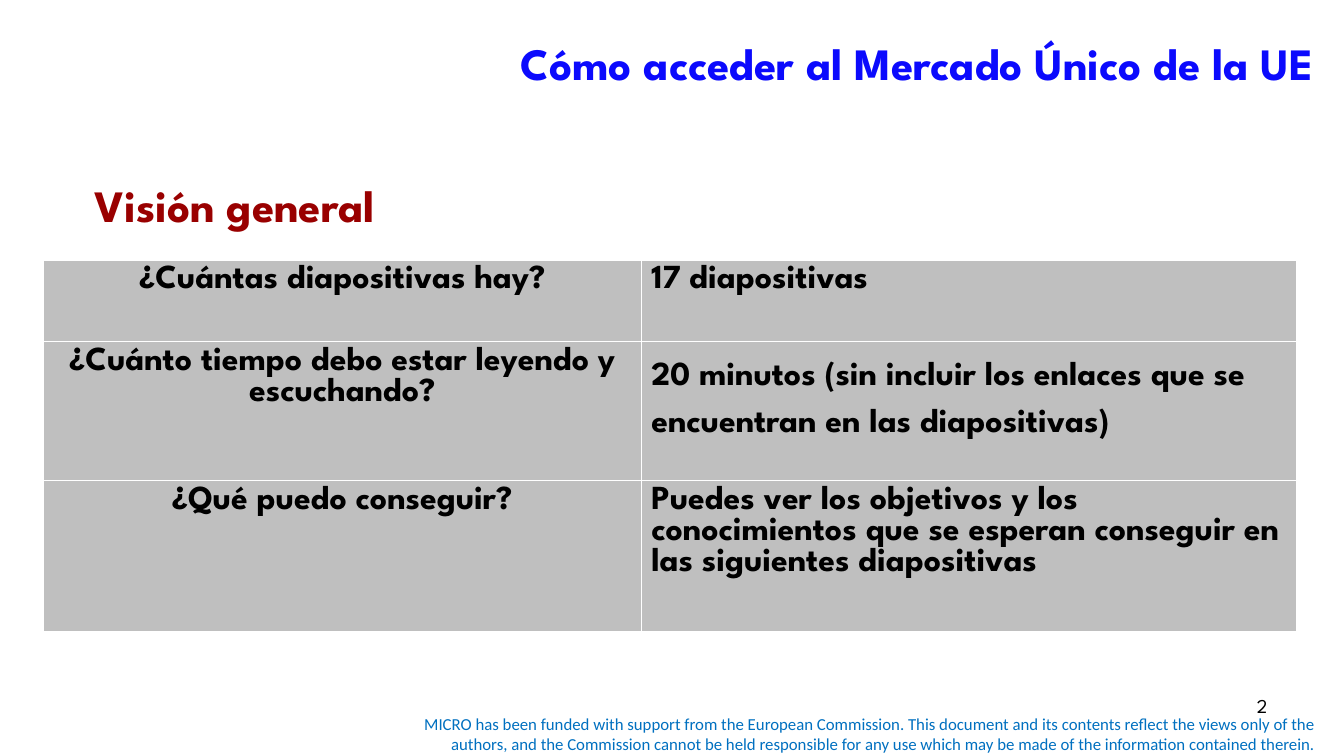
from dataclasses import dataclass

from lxml import etree
from pptx import Presentation
from pptx.dml.color import RGBColor
from pptx.enum import text
from pptx.oxml import ns
from pptx.util import Inches, Pt

SPARTAN = "League Spartan"
LEFT, CENTER, RIGHT = text.PP_ALIGN.LEFT, text.PP_ALIGN.CENTER, text.PP_ALIGN.RIGHT
TOP, MIDDLE = text.MSO_ANCHOR.TOP, text.MSO_ANCHOR.MIDDLE


@dataclass
class Style:
    size: int
    color: str
    bold: bool = False
    align: text.PP_ALIGN = LEFT
    font: str = SPARTAN
    spacing: float = 1.0


@dataclass
class Label:
    words: str
    box: tuple[float, float, float, float]
    style: Style
    anchor: text.MSO_ANCHOR = TOP


@dataclass
class Row:
    question: str
    answer: str
    height: float
    spacing: float = 1.0


FUNDING = Label(
    "MICRO has been funded with support from the European Commission. "
    "This document and its contents reflect the views only of the authors, "
    "and the Commission cannot be held responsible for any use which may be "
    "made of the information contained therein.",
    (3.75, 7.03, 9.4, 0.5), Style(12, "0070C0", align=RIGHT, font="Calibri"), MIDDLE)
PAGE_NUMBER = Label("2", (9.56, 6.83, 3.11, 0.52), Style(14, "000000", align=RIGHT))
HEADING = Label("Visión general", (0.84, 1.71, 4.6, 0.64), Style(32, "990000", True))
TITLE = Label("Cómo acceder al Mercado Único de la UE", (1.14, 0, 12, 1.25),
              Style(32, "0B0AFD", True, RIGHT), MIDDLE)

COLUMNS = (5.93, 6.5)
ROWS = [
    Row("¿Cuántas diapositivas hay?", "17 diapositivas", 0.81),
    Row("¿Cuánto tiempo debo estar leyendo y escuchando?",
        "20 minutos (sin incluir los enlaces que se encuentran en las diapositivas)",
        1.38, 1.5),
    Row("¿Qué puedo conseguir?",
        "Puedes ver los objetivos y los conocimientos que se esperan conseguir "
        "en las siguientes diapositivas", 1.5),
]


def rgb(value: str) -> RGBColor:
    return RGBColor.from_string(value)


def write(tf, words: str, style: Style) -> None:
    tf.text = words
    p = tf.paragraphs[0]
    p.alignment, p.line_spacing = style.align, style.spacing
    font = p.runs[0].font
    font.name, font.size, font.bold = style.font, Pt(style.size), style.bold
    font.color.rgb = rgb(style.color)


def fill_label(sp, label: Label) -> None:
    sp.left, sp.top, sp.width, sp.height = map(Inches, label.box)
    tf = sp.text_frame
    tf.word_wrap = True
    tf.auto_size = text.MSO_AUTO_SIZE.NONE
    tf.vertical_anchor = label.anchor
    write(tf, label.words, label.style)


def add_label(s, label: Label) -> None:
    fill_label(s.shapes.add_textbox(*map(Inches, label.box)), label)


def paint_cell(cell, fill: str, border: str) -> None:
    tcPr = cell._tc.get_or_add_tcPr()
    for side in ("lnL", "lnR", "lnT", "lnB"):
        line = etree.SubElement(tcPr, ns.qn(f"a:{side}"), w=str(Pt(1)))
        solid = etree.SubElement(line, ns.qn("a:solidFill"))
        etree.SubElement(solid, ns.qn("a:srgbClr"), val=border)
    cell.fill.solid()
    cell.fill.fore_color.rgb = rgb(fill)


def add_overview(s, rows: list[Row]) -> None:
    height = sum(row.height for row in rows)
    table = s.shapes.add_table(len(rows), len(COLUMNS), Inches(0.43), Inches(2.58),
                               Inches(sum(COLUMNS)), Inches(height)).table
    table.first_row = table.horz_banding = False
    for column, width in zip(table.columns, COLUMNS):
        column.width = Inches(width)
    for i, row in enumerate(rows):
        table.rows[i].height = Inches(row.height)
        styles = (Style(24, "000000", True, CENTER),
                  Style(24, "000000", True, spacing=row.spacing))
        for j, words in enumerate((row.question, row.answer)):
            cell = table.cell(i, j)
            paint_cell(cell, "BFBFBF", "FFFFFF")
            write(cell.text_frame, words, styles[j])


def main() -> None:
    prs = Presentation()
    prs.slide_width, prs.slide_height = Inches(13.33), Inches(7.5)
    s = prs.slides.add_slide(prs.slide_layouts[5])

    # Title
    fill_label(s.shapes.title, TITLE)

    # Footer, overview table and heading
    add_label(s, FUNDING)
    add_overview(s, ROWS)
    add_label(s, PAGE_NUMBER)
    add_label(s, HEADING)

    prs.save("out.pptx")


if __name__ == "__main__":
    main()
